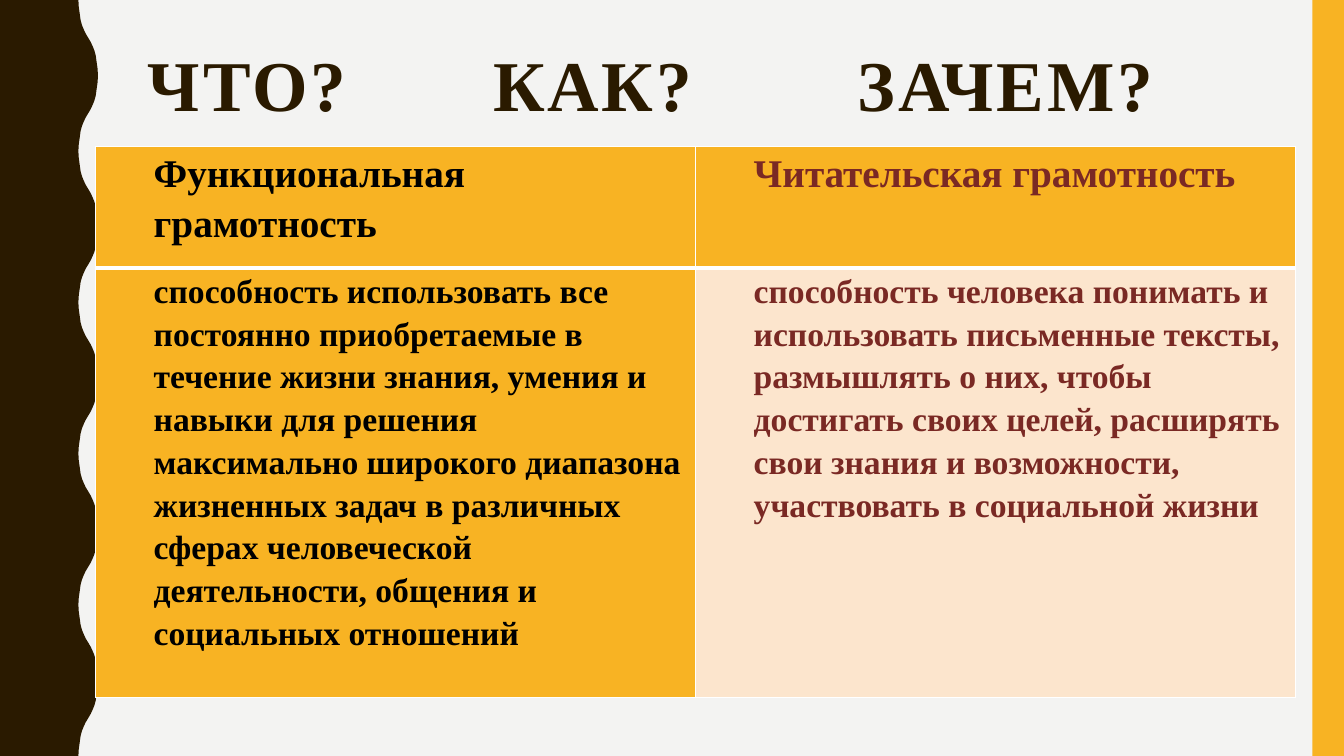
"""Build the slide that compares functional and reading literacy."""
from dataclasses import dataclass

from lxml import etree
from pptx import Presentation
from pptx.dml.color import RGBColor
from pptx.enum.shapes import MSO_SHAPE
from pptx.enum.text import MSO_ANCHOR
from pptx.oxml.ns import qn
from pptx.util import Pt

RECTANGLE = MSO_SHAPE.RECTANGLE
BOTTOM = MSO_ANCHOR.BOTTOM


@dataclass(frozen=True)
class Theme:
    font: str = "Times New Roman"
    background: str = "F3F3F2"
    dark: str = "2A1A00"
    amber: str = "F8B323"
    peach: str = "FCE5CD"
    maroon: str = "7A2924"
    black: str = "000000"
    border: str = "FFFFFF"
    title_size: float = 51
    heading_size: float = 28
    body_size: float = 24


@dataclass(frozen=True)
class Definition:
    term: str
    meaning: str
    color: str
    meaning_fill: str
    space_after: float


THEME = Theme()
SLIDE_WIDTH, SLIDE_HEIGHT = 960, 540
TITLE = "ЧТО?\tКАК?\tЗАЧЕМ?"
TITLE_TABS = (246.5, 507)
WAVE_LENGTH = 108
WAVE_QUARTER = ((56, 0), (56.3, 5), (57, 10), (57.6, 14.4),
                (58.6, 18), (59.8, 21), (61.2, 24), (63, 27))
COLUMN_WIDTH = 428.6
ROW_HEIGHTS = (87.1, 306.7)
THIN, THICK = 1, 3
DEFINITIONS = (
    Definition(
        "Функциональная грамотность",
        "способность использовать все постоянно приобретаемые в течение жизни "
        "знания, умения и навыки для решения максимально широкого диапазона "
        "жизненных задач в различных сферах человеческой деятельности, общения "
        "и социальных отношений",
        THEME.black, THEME.amber, 0),
    Definition(
        "Читательская грамотность",
        "способность человека понимать и использовать письменные тексты, "
        "размышлять о них, чтобы достигать своих целей, расширять свои знания "
        "и возможности, участвовать в социальной жизни",
        THEME.maroon, THEME.peach, 10),
)


def rgb(color: str) -> RGBColor:
    return RGBColor.from_string(color)


def paint(shape, color: str) -> None:
    shape.fill.solid()
    shape.fill.fore_color.rgb = rgb(color)
    shape.line.fill.background()
    shape.shadow.inherit = False


def format_runs(para, size: float, color: str) -> None:
    for span in para.runs:
        span.font.name = THEME.font
        span.font.size = Pt(size)
        span.font.bold = True
        span.font.color.rgb = rgb(color)


def wave_points() -> list[tuple[float, float]]:
    middle_x, middle_y = WAVE_QUARTER[-1]
    half = list(WAVE_QUARTER) + [
        (2 * middle_x - x, 2 * middle_y - y) for x, y in WAVE_QUARTER[-2::-1]]
    full = half + [(x, WAVE_LENGTH - y) for x, y in half[-2::-1]]
    return [(x, y + start) for start in range(0, SLIDE_HEIGHT, WAVE_LENGTH)
            for x, y in full]


def add_wave(page) -> None:
    builder = page.shapes.build_freeform(0, 0)
    outline = wave_points() + [(0, SLIDE_HEIGHT)]
    builder.add_line_segments([(Pt(x), Pt(y)) for x, y in outline], close=True)
    paint(builder.convert_to_shape(), THEME.dark)


def add_title(page) -> None:
    box = page.shapes.add_textbox(Pt(98.6), Pt(30.2), Pt(801.4), Pt(64.1))
    frame = box.text_frame
    frame.word_wrap = True
    frame.vertical_anchor = BOTTOM
    para = frame.paragraphs[0]
    para.text = TITLE
    para.line_spacing = 0.9
    tabs = etree.SubElement(para._p.get_or_add_pPr(), qn("a:tabLst"))
    for position in TITLE_TABS:
        etree.SubElement(tabs, qn("a:tab"), pos=str(Pt(position)), algn="l")
    format_runs(para, THEME.title_size, THEME.dark)
    for span in para.runs:
        span.font._element.set("spc", "200")


def set_borders(cell, top: float, bottom: float) -> None:
    properties = cell._tc.get_or_add_tcPr()
    widths = {"lnL": THIN, "lnR": THIN, "lnT": top, "lnB": bottom}
    for index, (side, width) in enumerate(widths.items()):
        line = etree.Element(qn(f"a:{side}"), w=str(Pt(width)))
        fill = etree.SubElement(line, qn("a:solidFill"))
        etree.SubElement(fill, qn("a:srgbClr"), val=THEME.border)
        properties.insert(index, line)


def fill_cell(cell, text: str, size: float, fill: str, definition: Definition) -> None:
    cell.fill.solid()
    cell.fill.fore_color.rgb = rgb(fill)
    cell.margin_left = cell.margin_right = Pt(5.4)
    cell.margin_top = cell.margin_bottom = Pt(0)
    para = cell.text_frame.paragraphs[0]
    para.text = text
    para.line_spacing = 1.15
    para.space_after = Pt(definition.space_after)
    properties = para._p.get_or_add_pPr()
    properties.set("marL", str(Pt(36)))
    properties.set("indent", "0")
    format_runs(para, size, definition.color)


def add_definitions(page) -> None:
    table = page.shapes.add_table(
        len(ROW_HEIGHTS), len(DEFINITIONS), Pt(68.4), Pt(104.4),
        Pt(COLUMN_WIDTH * len(DEFINITIONS)), Pt(sum(ROW_HEIGHTS))).table
    table.first_row = table.horz_banding = False
    for row, height in zip(table.rows, ROW_HEIGHTS):
        row.height = Pt(height)
    for index, definition in enumerate(DEFINITIONS):
        table.columns[index].width = Pt(COLUMN_WIDTH)
        heading, body = table.cell(0, index), table.cell(1, index)
        fill_cell(heading, definition.term, THEME.heading_size,
                  THEME.amber, definition)
        fill_cell(body, definition.meaning, THEME.body_size,
                  definition.meaning_fill, definition)
        set_borders(heading, THIN, THICK)
        set_borders(body, THICK, THIN)


def main() -> None:
    deck = Presentation()
    deck.slide_width, deck.slide_height = Pt(SLIDE_WIDTH), Pt(SLIDE_HEIGHT)
    page = deck.slides.add_slide(deck.slide_layouts[6])
    page.background.fill.solid()
    page.background.fill.fore_color.rgb = rgb(THEME.background)
    add_wave(page)
    stripe = page.shapes.add_shape(
        RECTANGLE, Pt(937.5), Pt(0), Pt(22.5), Pt(SLIDE_HEIGHT))
    paint(stripe, THEME.amber)
    add_title(page)
    add_definitions(page)
    deck.save("out.pptx")


if __name__ == "__main__":
    main()
